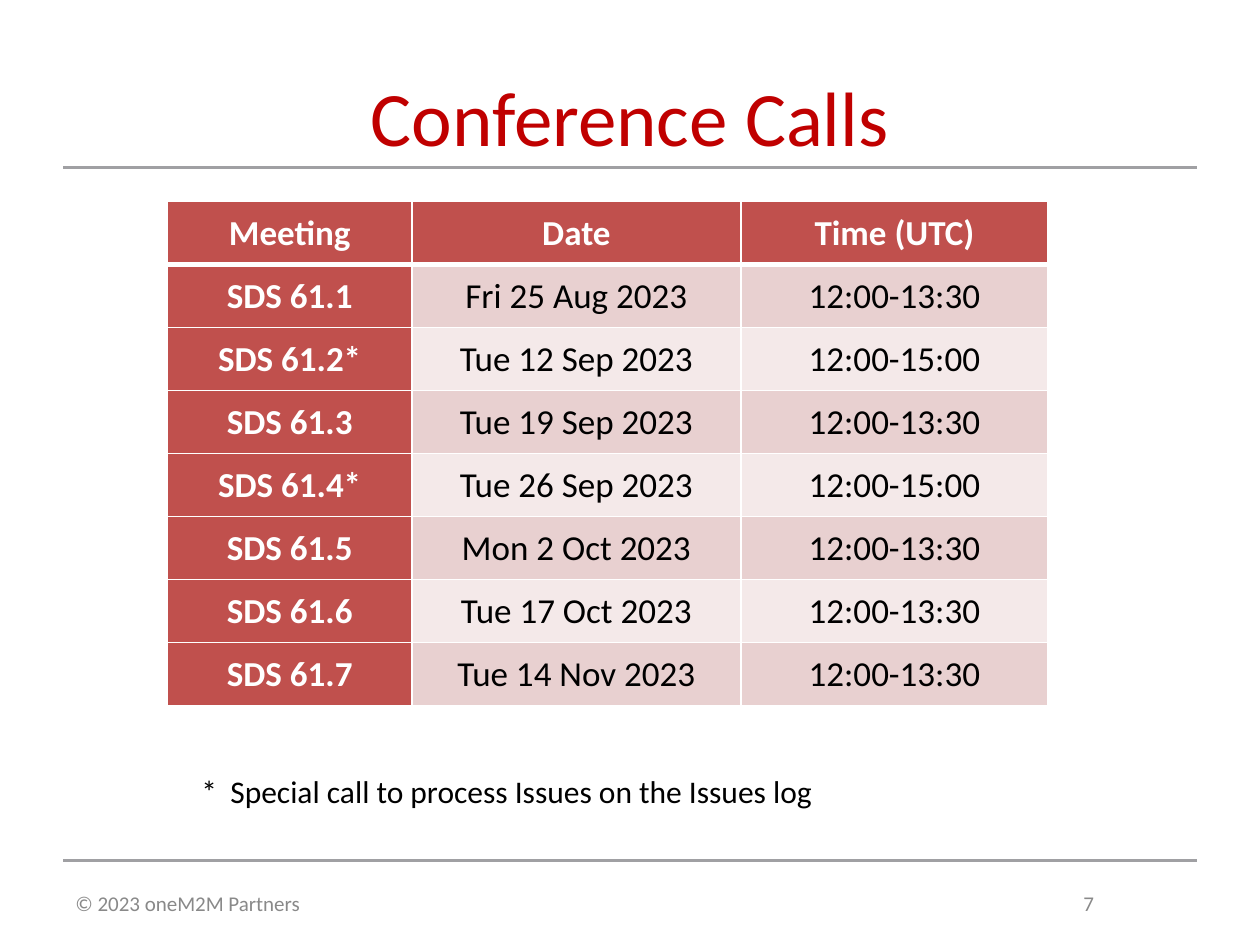
from dataclasses import dataclass

from lxml import etree
from pptx import Presentation
from pptx.dml.color import RGBColor as RGB
from pptx.enum.shapes import MSO_CONNECTOR as Conn
from pptx.enum.text import MSO_ANCHOR as Anchor, PP_ALIGN as Align
from pptx.oxml.ns import qn
from pptx.util import Inches, Pt


@dataclass(frozen=True)
class Theme:
    font: str = "Calibri"
    title: str = "C00000"
    rule: str = "A0A0A3"
    muted: str = "898989"
    dark: str = "000000"
    light: str = "FFFFFF"
    header: str = "C0504D"
    bands: tuple = ("E8D0D0", "F4E9E9")
    title_size: int = 44
    table_size: int = 20
    note_size: int = 18
    footer_size: int = 12


def write(tf, text, *, font, size, color, bold=False, align=Align.LEFT, tab=None):
    """Write one paragraph, with an optional left tab stop in inches."""
    p = tf.paragraphs[0]
    p.alignment = align
    if tab is not None:
        tabs = etree.SubElement(p._p.get_or_add_pPr(), qn("a:tabLst"))
        etree.SubElement(tabs, qn("a:tab"), pos=str(Inches(tab)), algn="l")
    r = p.add_run()
    r.text = text
    r.font.name = font
    r.font.size = Pt(size)
    r.font.bold = bold
    r.font.color.rgb = RGB.from_string(color)


def set_borders(cell, color, widths):
    """Draw the cell borders; widths maps each side tag to points."""
    pr = cell._tc.get_or_add_tcPr()
    for i, (side, width) in enumerate(widths.items()):
        ln = etree.Element(qn(f"a:{side}"), w=str(Pt(width)))
        fill = etree.SubElement(ln, qn("a:solidFill"))
        etree.SubElement(fill, qn("a:srgbClr"), val=color)
        pr.insert(i, ln)


class SlideBuilder:
    def __init__(self, s, theme):
        self.s = s
        self.theme = theme

    def rule(self, x1, x2, y):
        line = self.s.shapes.add_connector(
            Conn.STRAIGHT, Inches(x1), Inches(y), Inches(x2), Inches(y))
        line.line.color.rgb = RGB.from_string(self.theme.rule)
        line.line.width = Pt(1.75)
        etree.SubElement(line._element.spPr, qn("a:effectLst"))

    def text(self, box, text, *, anchor=Anchor.TOP, wrap=True, **style):
        sp = self.s.shapes.add_textbox(*map(Inches, box))
        tf = sp.text_frame
        tf.word_wrap = wrap
        tf.vertical_anchor = anchor
        write(tf, text, font=self.theme.font, **style)

    def table(self, left, top, col_widths, row_height, rows):
        t = self.theme
        frame = self.s.shapes.add_table(
            len(rows), len(col_widths), Inches(left), Inches(top),
            Inches(sum(col_widths)), Inches(row_height * len(rows)))
        table = frame.table
        for col, width in zip(table.columns, col_widths):
            col.width = Inches(width)
        for i, values in enumerate(rows):
            table.rows[i].height = Inches(row_height)
            for j, value in enumerate(values):
                self.cell(table.cell(i, j), value, i, is_head=i == 0 or j == 0)

    def cell(self, cell, value, row, is_head):
        t = self.theme
        cell.margin_left = cell.margin_right = Inches(0.07)
        cell.margin_top = cell.margin_bottom = 0
        cell.vertical_anchor = Anchor.MIDDLE
        cell.fill.solid()
        cell.fill.fore_color.rgb = RGB.from_string(
            t.header if is_head else t.bands[(row - 1) % 2])
        # A thick line separates the header row from the body
        set_borders(cell, t.light, {
            "lnL": 1, "lnR": 1,
            "lnT": 3 if row == 1 else 1, "lnB": 3 if row == 0 else 1})
        write(cell.text_frame, value, font=t.font, size=t.table_size,
              color=t.light if is_head else t.dark, bold=is_head,
              align=Align.CENTER)


CALLS = [
    ("Meeting", "Date", "Time (UTC)"),
    ("SDS 61.1", "Fri 25 Aug 2023", "12:00-13:30"),
    ("SDS 61.2*", "Tue 12 Sep 2023", "12:00-15:00"),
    ("SDS 61.3", "Tue 19 Sep 2023", "12:00-13:30"),
    ("SDS 61.4*", "Tue 26 Sep 2023", "12:00-15:00"),
    ("SDS 61.5", "Mon 2 Oct 2023", "12:00-13:30"),
    ("SDS 61.6", "Tue 17 Oct 2023", "12:00-13:30"),
    ("SDS 61.7", "Tue 14 Nov 2023", "12:00-13:30"),
]


def main():
    prs = Presentation()
    prs.slide_width, prs.slide_height = Inches(10), Inches(7.5)
    t = Theme()
    b = SlideBuilder(prs.slides.add_slide(prs.slide_layouts[6]), t)

    # Rules above the footer and below the title
    for y in (6.83, 1.33):
        b.rule(0.5, 9.5, y)

    # Title
    b.text((0.5, 0.5, 9, 1.25), "Conference Calls", size=t.title_size,
           color=t.title, align=Align.CENTER)

    # Footer with the page number at a tab stop
    b.text((0.5, 6.83, 9, 0.67), "© 2023 oneM2M Partners\t7",
           anchor=Anchor.MIDDLE, size=t.footer_size, color=t.muted, tab=8)

    # Call schedule
    b.table(1.33, 1.6, (1.94, 2.61, 2.44), 0.5, CALLS)

    # Footnote
    b.text((1.5, 6.08, 5.12, 0.4),
           "*\tSpecial call to process Issues on the Issues log",
           wrap=False, size=t.note_size, color=t.dark, tab=0.23)

    prs.save("out.pptx")


if __name__ == "__main__":
    main()
